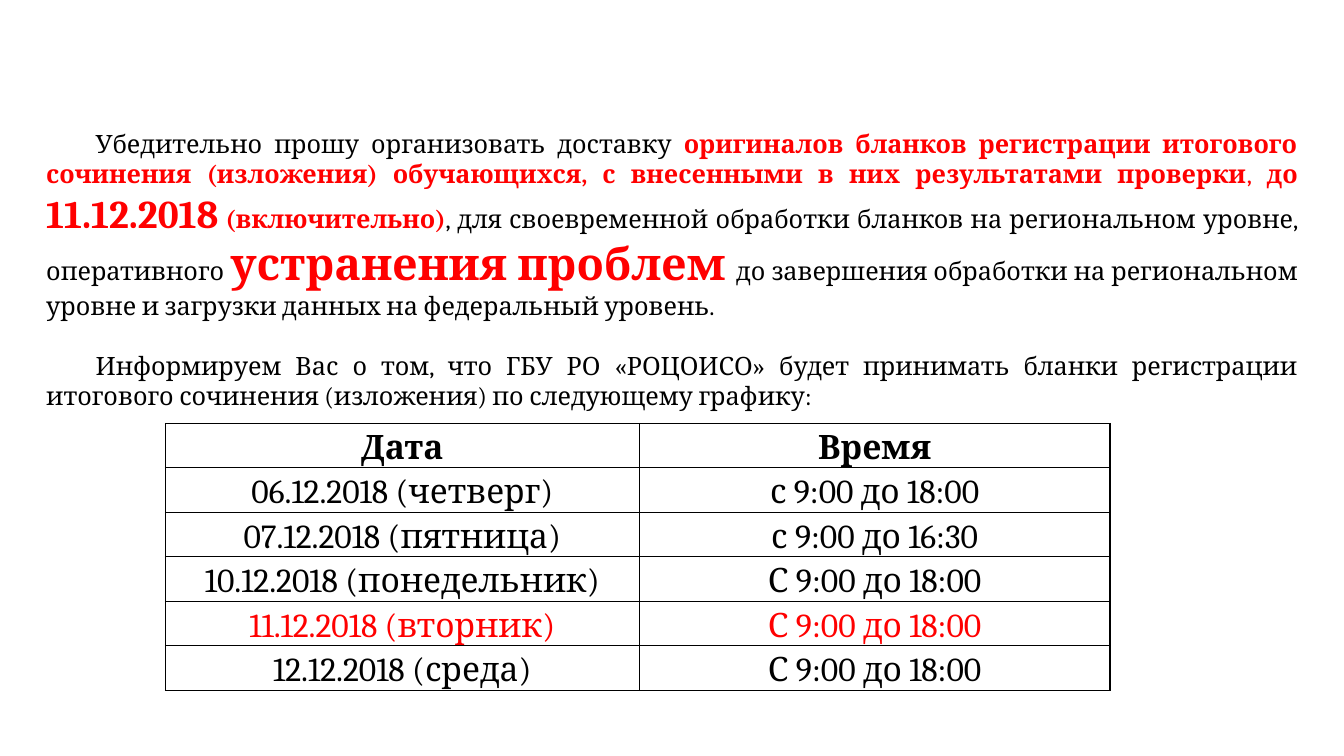
"""Builds the slide with the delivery request and the acceptance schedule."""
from lxml import etree
from pptx import Presentation, util as u
from pptx.dml.color import RGBColor
from pptx.enum import text
from pptx.oxml import ns

BLACK = RGBColor(0x00, 0x00, 0x00)
RED = RGBColor(0xFF, 0x00, 0x00)


def apply(target, formats):
    """Sets each attribute of the target from a dict of format values."""
    for name, value in formats.items():
        setattr(target, name, value)


class SlideWriter:
    """Holds the slide style and draws text and tables on the current slide."""

    font_name = "Cambria"
    body_size = 18
    table_size = 24

    def __init__(self, deck):
        """Adds a blank slide to the deck."""
        self.slide = deck.slides.add_slide(deck.slide_layouts[6])

    def add_run(self, paragraph, wording, size, color=BLACK, bold=False):
        """Appends one formatted run to a paragraph."""
        run = paragraph.add_run()
        run.text = wording
        apply(run.font, {"name": self.font_name, "size": u.Pt(size), "bold": bold})
        run.font.color.rgb = color

    def add_letter(self, left, top, width, height, paragraphs, indent, gap):
        """Adds justified paragraphs with a first-line indent."""
        frame = self.slide.shapes.add_textbox(
            u.Inches(left), u.Inches(top), u.Inches(width), u.Inches(height)).text_frame
        apply(frame, {
            "word_wrap": True,
            "auto_size": text.MSO_AUTO_SIZE.SHAPE_TO_FIT_TEXT,
            "vertical_anchor": text.MSO_ANCHOR.MIDDLE,
        })
        for number, pieces in enumerate(paragraphs):
            paragraph = frame.add_paragraph() if number else frame.paragraphs[0]
            apply(paragraph, {
                "alignment": text.PP_ALIGN.JUSTIFY,
                "space_before": u.Pt(gap if number else 0),
            })
            properties = paragraph._p.get_or_add_pPr()
            properties.set("marL", "0")
            properties.set("indent", str(u.Inches(indent)))
            for wording, formats in pieces:
                self.add_run(paragraph, wording, **{"size": self.body_size, **formats})

    def add_borders(self, cell):
        """Draws a thin black line on all four sides of a cell."""
        properties = cell._tc.get_or_add_tcPr()
        for position, side in enumerate(("lnL", "lnR", "lnT", "lnB")):
            line = etree.Element(ns.qn(f"a:{side}"), w=str(u.Pt(1)))
            fill = etree.SubElement(line, ns.qn("a:solidFill"))
            etree.SubElement(fill, ns.qn("a:srgbClr"), val=str(BLACK))
            properties.insert(position, line)

    def add_schedule(self, left, top, widths, row_height, rows, urgent_row):
        """Adds a bordered table with a bold header and one red row."""
        table = self.slide.shapes.add_table(
            len(rows), len(widths), u.Inches(left), u.Inches(top),
            u.Inches(sum(widths)), u.Inches(row_height * len(rows))).table
        apply(table, {"first_row": False, "horz_banding": False})
        for column, width in zip(table.columns, widths):
            column.width = u.Inches(width)
        for row_number, values in enumerate(rows):
            color = RED if row_number == urgent_row else BLACK
            for column_number, value in enumerate(values):
                cell = table.cell(row_number, column_number)
                apply(cell, {
                    "margin_left": u.Inches(0.07), "margin_right": u.Inches(0.07),
                    "margin_top": 0, "margin_bottom": 0,
                })
                cell.fill.background()
                self.add_borders(cell)
                paragraph = cell.text_frame.paragraphs[0]
                apply(paragraph, {"alignment": text.PP_ALIGN.CENTER, "line_spacing": 1.15})
                self.add_run(paragraph, value, self.table_size, color, row_number == 0)


def main():
    """Builds and saves the deck."""
    deck = Presentation()
    apply(deck, {"slide_width": u.Inches(13.33), "slide_height": u.Inches(7.5)})
    writer = SlideWriter(deck)
    urgent = {"color": RED, "bold": True}
    request = [
        ("Убедительно прошу организовать доставку ", {}),
        ("оригиналов бланков регистрации итогового сочинения (изложения) обучающихся, "
         "с внесенными в них результатами проверки", urgent),
        (", ", {"color": RED}),
        ("до ", urgent),
        ("11.12.2018", {**urgent, "size": 28}),
        (" (включительно)", urgent),
        (", для своевременной обработки бланков на региональном уровне, оперативного ", {}),
        ("устранения проблем ", {**urgent, "size": 32}),
        ("до завершения обработки на региональном уровне "
         "и загрузки данных на федеральный уровень.", {}),
    ]
    notice = [
        ("Информируем Вас о том, что ГБУ РО «РОЦОИСО» будет принимать бланки регистрации "
         "итогового сочинения (изложения) по следующему графику:", {}),
    ]
    schedule = [
        ("Дата", "Время"),
        ("06.12.2018 (четверг)", "с 9:00 до 18:00"),
        ("07.12.2018 (пятница)", "с 9:00 до 16:30"),
        ("10.12.2018 (понедельник)", "С 9:00 до 18:00"),
        ("11.12.2018 (вторник)", "С 9:00 до 18:00"),
        ("12.12.2018 (среда)", "С 9:00 до 18:00"),
    ]
    writer.add_schedule(1.64, 4.2, (4.7, 4.67), 0.44, schedule, urgent_row=4)
    writer.add_letter(0.36, 1.21, 12.61, 2.93, [request, notice], indent=0.49, gap=21.5)
    deck.save("out.pptx")


if __name__ == "__main__":
    main()
